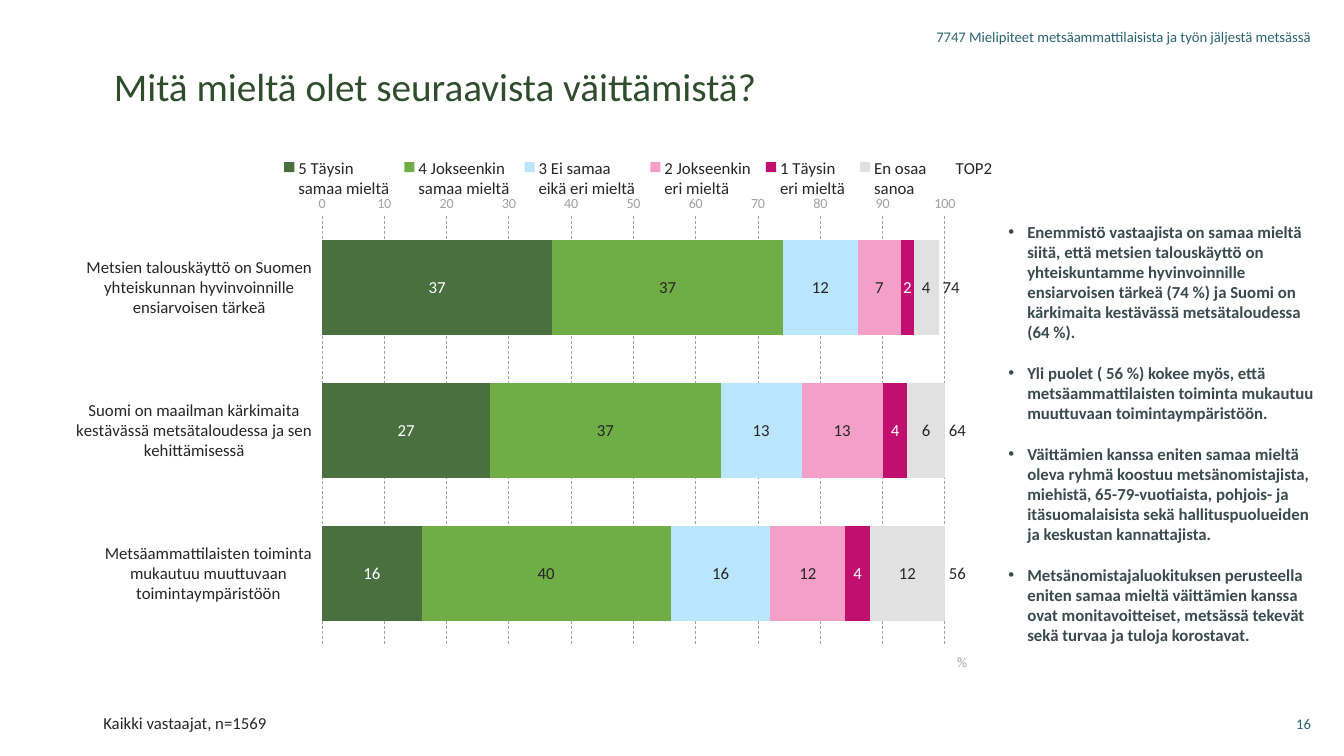
from pptx import Presentation
from pptx.chart.data import CategoryChartData
from pptx.dml.color import RGBColor
from pptx.enum.chart import (XL_AXIS_CROSSES, XL_CHART_TYPE, XL_LABEL_POSITION,
                             XL_LEGEND_POSITION, XL_TICK_LABEL_POSITION, XL_TICK_MARK)
from pptx.enum.dml import MSO_LINE
from pptx.enum.text import MSO_ANCHOR, PP_ALIGN
from pptx.oxml import parse_xml
from pptx.oxml.ns import nsdecls, qn
from pptx.util import Emu, Pt

FONT = "Calibri"
INK, SLATE, TEAL, GREY = "262626", "3A4A4E", "2A6471", "A0A0A0"

CLAIMS = [
    "Metsien talouskäyttö on Suomen yhteiskunnan hyvinvoinnille ensiarvoisen tärkeä",
    "Suomi on maailman kärkimaita kestävässä metsätaloudessa ja sen kehittämisessä",
    "Metsäammattilaisten toiminta mukautuu muuttuvaan toimintaympäristöön",
]
ANSWERS = [
    ("5 Täysin\nsamaa mieltä", (37, 27, 16), "4A7040", "FFFFFF"),
    ("4 Jokseenkin\nsamaa mieltä", (37, 37, 40), "70AD47", INK),
    ("3 Ei samaa\neikä eri mieltä", (12, 13, 16), "B9E6FD", INK),
    ("2 Jokseenkin\neri mieltä", (7, 13, 12), "F39FC7", INK),
    ("1 Täysin\neri mieltä", (2, 4, 4), "C10F70", "FFFFFF"),
    ("En osaa\nsanoa", (4, 6, 12), "E1E1E1", INK),
    ("TOP2", (74, 64, 56), None, INK),
]
NOTES = [
    "Enemmistö vastaajista on samaa mieltä siitä, että metsien talouskäyttö on "
    "yhteiskuntamme hyvinvoinnille ensiarvoisen tärkeä (74 %) ja Suomi on kärkimaita "
    "kestävässä metsätaloudessa (64 %).",
    "Yli puolet ( 56 %) kokee myös, että metsäammattilaisten toiminta mukautuu "
    "muuttuvaan toimintaympäristöön.",
    "Väittämien kanssa eniten samaa mieltä oleva ryhmä koostuu metsänomistajista, "
    "miehistä, 65-79-vuotiaista, pohjois- ja itäsuomalaisista sekä hallituspuolueiden "
    "ja keskustan kannattajista.",
    "Metsänomistajaluokituksen perusteella eniten samaa mieltä väittämien kanssa ovat "
    "monitavoitteiset, metsässä tekevät sekä turvaa ja tuloja korostavat.",
]


def px(count):
    return Emu(count * 9525)


def color(code):
    return RGBColor.from_string(code)


def style(font, size, code, bold=False):
    font.name, font.size, font.bold = FONT, Pt(size), bold
    font.color.rgb = color(code)


def add_text(slide, area, text, size, code, align=PP_ALIGN.LEFT, anchor=MSO_ANCHOR.TOP):
    frame = slide.shapes.add_textbox(*map(px, area)).text_frame
    frame.word_wrap = True
    frame.vertical_anchor = anchor
    frame.text = text
    line = frame.paragraphs[0]
    line.alignment = align
    style(line.runs[0].font, size, code)
    return line


def add_list(slide, area, items):
    frame = slide.shapes.add_textbox(*map(px, area)).text_frame
    frame.word_wrap = True
    frame.text = "\n".join(items)
    for index, item in enumerate(frame.paragraphs):
        props = item._p.get_or_add_pPr()
        props.set("marL", str(px(18)))
        props.set("indent", str(px(-18)))
        props.append(parse_xml(f'<a:buFont {nsdecls("a")} typeface="Arial"/>'))
        props.append(parse_xml(f'<a:buChar {nsdecls("a")} char="•"/>'))
        if index:
            item.space_before = Pt(14.5)
        style(item.runs[0].font, 12, SLATE, True)


def place(parent, index, left, top, width=None, height=None, inner=False):
    for old in parent.findall(qn("c:layout")):
        parent.remove(old)
    target = '<c:layoutTarget val="inner"/>' if inner else ""
    size = f'<c:w val="{width}"/><c:h val="{height}"/>' if width else ""
    parent.insert(index, parse_xml(
        f'<c:layout {nsdecls("c")}><c:manualLayout>{target}'
        '<c:xMode val="edge"/><c:yMode val="edge"/>'
        f'<c:x val="{left}"/><c:y val="{top}"/>{size}</c:manualLayout></c:layout>'))


def set_axes(chart):
    rows, scale = chart.category_axis, chart.value_axis
    for axis, size, code in ((rows, 12, INK), (scale, 10, GREY)):
        axis.major_tick_mark = axis.minor_tick_mark = XL_TICK_MARK.NONE
        axis.format.line.fill.background()
        style(axis.tick_labels.font, size, code)
    rows.reverse_order = True
    rows.tick_label_position = XL_TICK_LABEL_POSITION.LOW
    rows.crosses = XL_AXIS_CROSSES.MAXIMUM
    scale.minimum_scale, scale.maximum_scale, scale.major_unit = 0, 100.01, 10
    scale.tick_labels.number_format = "General"
    scale.tick_labels.number_format_is_linked = False
    grid = scale.major_gridlines.format.line
    grid.color.rgb = color(GREY)
    grid.width = Pt(0.5)
    grid.dash_style = MSO_LINE.DASH
    title = scale.axis_title
    title.text_frame.text = "%"
    style(title.text_frame.paragraphs[0].runs[0].font, 10, GREY)
    place(title._element, 1, 0.95, 0.95)


def fill_bars(plot):
    plot.gap_width, plot.overlap = 50, 100
    plot.vary_by_categories = False
    for series, (_, _, fill, ink) in zip(plot.series, ANSWERS):
        labels = series.data_labels
        labels.show_value = True
        labels.number_format = "#,##0"
        labels.number_format_is_linked = False
        style(labels.font, 12, ink)
        if fill:
            series.format.fill.solid()
            series.format.fill.fore_color.rgb = color(fill)
            labels.position = XL_LABEL_POSITION.CENTER
        else:
            series.format.fill.background()
            labels.position = XL_LABEL_POSITION.INSIDE_BASE


def add_bars(slide, area):
    data = CategoryChartData()
    data.categories = CLAIMS
    for name, values, _, _ in ANSWERS:
        data.add_series(name, values)
    chart = slide.shapes.add_chart(XL_CHART_TYPE.BAR_STACKED, *map(px, area), data).chart
    style(chart.font, 12, SLATE)
    chart.has_title = False
    chart.has_legend = True
    legend = chart.legend
    legend.position = XL_LEGEND_POSITION.TOP
    legend.include_in_layout = False
    style(legend.font, 12, INK)
    place(legend._element, 1, 0.23, 0.01, 0.77, 0.1)
    set_axes(chart)
    fill_bars(chart.plots[0])
    place(chart._chartSpace.chart.plotArea, 0, 0.28, 0.13, 0.66, 0.81, True)


def main():
    deck = Presentation()
    deck.slide_width, deck.slide_height = px(1280), px(720)
    slide = deck.slides.add_slide(deck.slide_layouts[6])
    add_text(slide, (826, 16, 432, 38),
             "7747 Mielipiteet metsäammattilaisista ja työn jäljestä metsässä",
             10.5, TEAL, PP_ALIGN.RIGHT, MSO_ANCHOR.MIDDLE)
    add_text(slide, (1215, 670, 43, 38), "16", 10.5, TEAL, PP_ALIGN.RIGHT, MSO_ANCHOR.MIDDLE)
    add_bars(slide, (55, 140, 899, 505))
    add_text(slide, (99, 55, 1002, 60), "Mitä mieltä olet seuraavista väittämistä?",
             28, "2F4D2D")
    base = add_text(slide, (89, 676, 881, 27), "Kaikki vastaajat, n=1569", 12, INK)
    base.line_spacing = 0.9
    add_list(slide, (951, 206, 314, 417), NOTES)
    deck.save("out.pptx")


if __name__ == "__main__":
    main()
